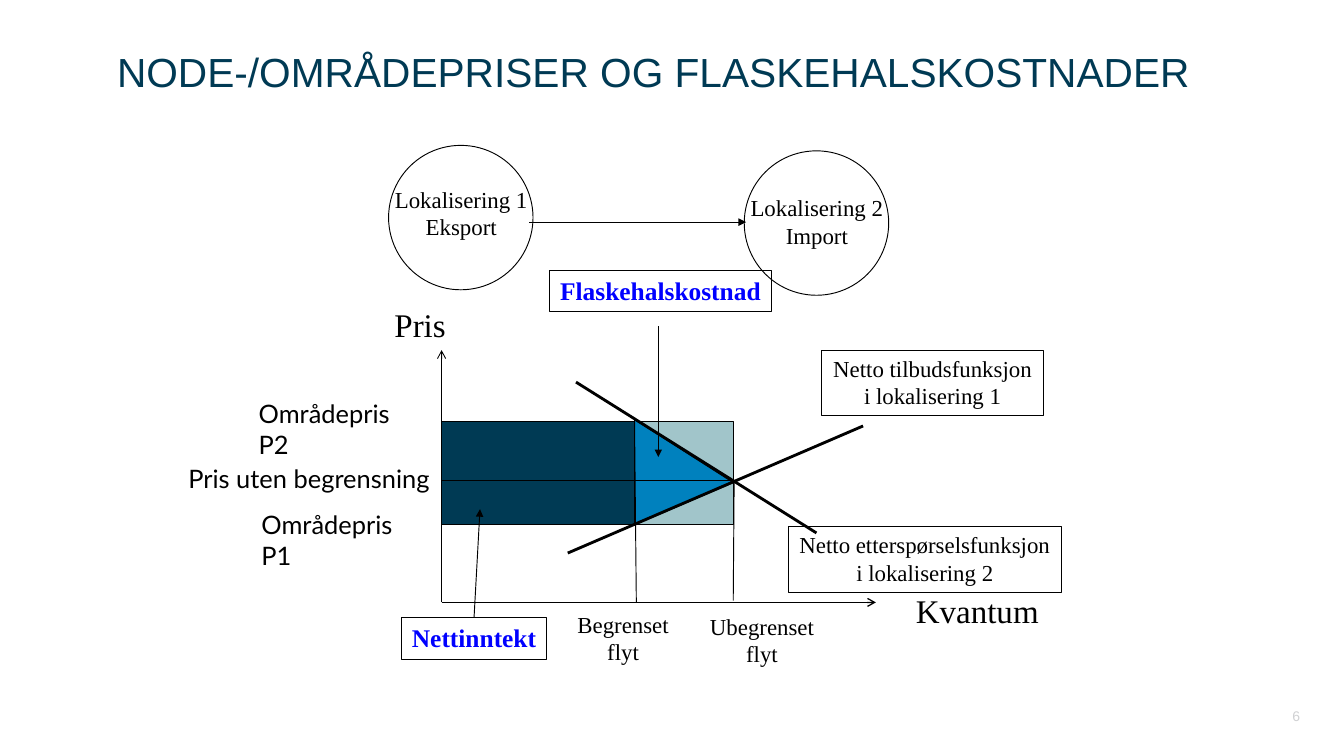
from dataclasses import dataclass
from pptx import Presentation
from pptx.dml.color import RGBColor as Rgb
from pptx.enum.shapes import MSO_CONNECTOR as Link, MSO_SHAPE as Kind
from pptx.enum.text import MSO_ANCHOR as Anchor, MSO_AUTO_SIZE as Fit, PP_ALIGN as Align
from pptx.oxml.ns import qn
from pptx.util import Pt
from lxml.etree import SubElement as Sub

PX = 9144  # 100 px to the inch


@dataclass(frozen=True)
class Theme:
    navy: str = "003A54"
    blue: str = "0081BE"
    pale: str = "A1C5CA"
    ink: str = "000000"
    accent: str = "0000FF"
    gray: str = "D0D1D3"
    sans: str = "Arial"
    serif: str = "Times New Roman"
    label: str = "Lato"
    title: int = 32
    axis: int = 26
    large: int = 20
    body: int = 18
    small: int = 11
    thin: float = 0.75
    bold: float = 2.25


T = Theme()


def color(code):
    return Rgb.from_string(code)


def px(*nums):
    return [n * PX for n in nums]


def write(shape, text, size, font=T.serif, ink=T.ink, align=Align.CENTER,
          bold=False, wrap=False, pad=(11, 5)):
    frame = shape.text_frame
    frame.text = text
    frame.word_wrap = wrap
    frame.auto_size = Fit.NONE
    frame.vertical_anchor = Anchor.TOP
    frame.margin_left = frame.margin_right = pad[0] * PX
    frame.margin_top = frame.margin_bottom = pad[1] * PX
    for para in frame.paragraphs:
        para.alignment = align
        for run in para.runs:
            run.font.size, run.font.name, run.font.bold = Pt(size), font, bold
            run.font.color.rgb = color(ink)


def note(slide, box, text, size, **style):
    write(slide.shapes.add_textbox(*px(*box)), text, size, **style)


def paint(shape, fill=None):
    shape.shadow.inherit = False
    if fill:
        shape.fill.solid()
        shape.fill.fore_color.rgb = color(fill)
    else:
        shape.fill.background()
    shape.line.color.rgb = color(T.ink)
    shape.line.width = Pt(T.thin)
    return shape


def block(slide, box, fill=None, kind=Kind.RECTANGLE):
    return paint(slide.shapes.add_shape(kind, *px(*box)), fill)


def line(slide, start, end, width=T.thin, tip=None):
    link = slide.shapes.add_connector(Link.STRAIGHT, *px(*start, *end))
    link.line.color.rgb = color(T.ink)
    link.line.width = Pt(width)
    props = link._element.spPr
    if tip:
        Sub(props.find(qn("a:ln")), qn("a:tailEnd"), type=tip)
    Sub(props, qn("a:effectLst"))
    return link


def header(slide, box):
    title = slide.shapes.title
    title.left, title.top, title.width, title.height = px(*box)
    write(title, "NODE-/OMRÅDEPRISER OG FLASKEHALSKOSTNADER", T.title,
          font=T.sans, ink=T.navy, align=Align.LEFT, wrap=True, pad=(10, 5))


def flow(slide, x, y):
    """Export and import locations, joined by an arrow."""
    places = [(4, 0, 39, "Lokalisering 1\nEksport"),
              (393, 6, 48, "Lokalisering 2\nImport")]
    for left, top, down, text in places:
        block(slide, (x + left, y + top, 158, 158), kind=Kind.OVAL)
        note(slide, (x + left - 4, y + down, 167, 71), text, T.body, pad=(10, 5))
    line(slide, (x + 158, y + 84), (x + 395, y + 84), tip="triangle")


def chart(slide, x, y):
    """Price and quantity diagram; the box starts at the top of the price axis."""
    foot, high, mid, low = y + 276, y + 78, y + 143, y + 191
    cap, free = x + 211, x + 319

    # Areas
    block(slide, (cap, high, free - cap, low - high), T.pale)
    cost = slide.shapes.build_freeform(cap, high - 2, scale=PX)
    cost.add_line_segments([(cap, low), (free, mid + 2)], close=True)
    paint(cost.convert_to_shape(), T.blue)
    block(slide, (x, high, cap - x, low - high), T.navy)

    # Axes
    line(slide, (x, foot), (x, y), tip="arrow")
    line(slide, (x, foot), (x + 475, foot), 1, "arrow")
    note(slide, (x - 63, y - 55, 79, 55), "Pris", T.axis)
    note(slide, (x + 507, y + 258, 158, 55), "Kvantum", T.axis)

    # Guides
    line(slide, (cap, high - 4), (cap + 2, foot))
    line(slide, (free + 1, mid - 1), (free, foot - 2))
    for level, end in ((high, cap), (mid, free), (low, cap)):
        line(slide, (end, level), (x, level))

    # Net demand and net supply
    line(slide, (x + 147, y + 35), (x + 410, y + 200), T.bold)
    line(slide, (x + 138, y + 222), (x + 461, y + 83), T.bold)

    # Quantity and price labels
    note(slide, (x + 134, y + 280, 129, 72), "Begrenset\nflyt", T.body)
    note(slide, (x + 279, y + 282, 143, 72), "Ubegrenset\nflyt", T.body)
    price = dict(font=T.label, align=Align.LEFT)
    note(slide, (x - 211, y + 48, 190, 45), "Områdepris P2", T.large, wrap=True, **price)
    note(slide, (x - 288, y + 119, 291, 45), "Pris uten begrensning", T.large, **price)
    note(slide, (x - 208, y + 169, 190, 45), "Områdepris P1", T.large, wrap=True, **price)


def tags(slide, x, y):
    """Framed captions, placed from the same corner as the chart."""
    for box, text in (((x + 416, y, 242, 72), "Netto tilbudsfunksjon\ni lokalisering 1"),
                      ((x + 379, y + 193, 299, 72),
                       "Netto etterspørselsfunksjon\ni lokalisering 2")):
        write(block(slide, box), text, T.body)
    strong = dict(ink=T.accent, bold=True)
    income = block(slide, (x - 44, y + 293, 159, 45))
    write(income, "Nettinntekt", T.large, **strong)
    arrow = line(slide, (x + 36, y + 293), (x + 42, y + 174), tip="triangle")
    arrow.begin_connect(income, 0)
    write(block(slide, (x + 118, y - 87, 243, 45)), "Flaskehalskostnad", T.large, **strong)
    line(slide, (x + 237, y - 26), (x + 237, y + 117), tip="triangle")


def main():
    deck = Presentation()
    deck.slide_width, deck.slide_height = px(1470, 827)
    slide = deck.slides.add_slide(deck.slide_layouts[5])
    header(slide, (118, 46, 1203, 100))
    flow(slide, 421, 159)
    chart(slide, 483, 383)
    tags(slide, 483, 383)
    note(slide, (1321, 774, 101, 44), "6", T.small, font=T.sans,
         ink=T.gray, align=Align.RIGHT, wrap=True, pad=(0, 0))
    deck.save("out.pptx")


if __name__ == "__main__":
    main()
